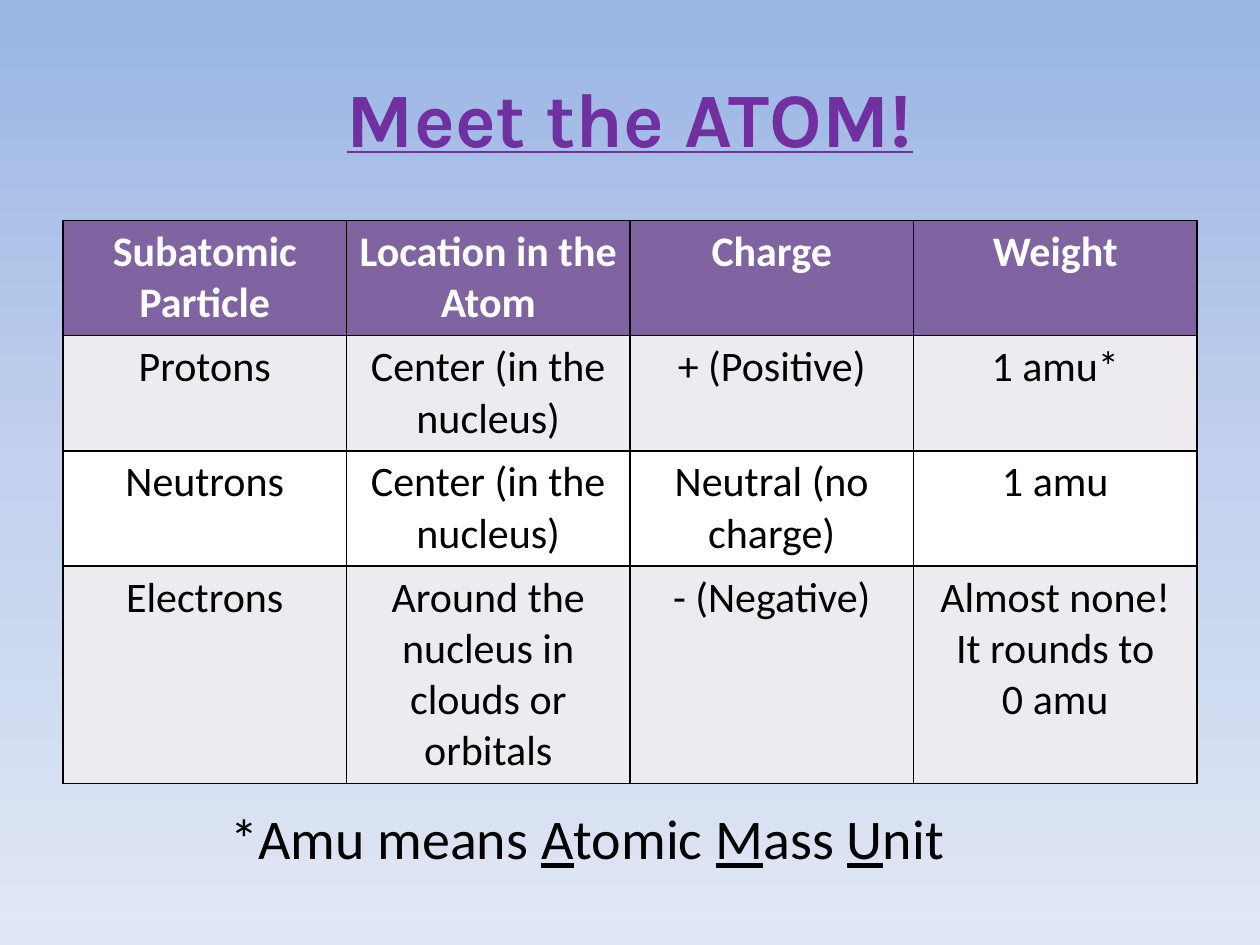
from copy import deepcopy
from dataclasses import dataclass

from lxml.etree import SubElement
from pptx import Presentation
from pptx.dml.color import RGBColor
from pptx.enum.text import MSO_ANCHOR, MSO_AUTO_SIZE, PP_ALIGN
from pptx.oxml.ns import qn
from pptx.util import Inches, Pt


@dataclass(frozen=True)
class Theme:
    body_font: str = "Calibri"
    title_font: str = "Karla"
    title_size: int = 44
    table_size: int = 24
    note_size: int = 32
    border_width: float = 1
    title: str = "7030A0"
    text: str = "000000"
    header_text: str = "FFFFFF"
    header_fill: str = "8064A2"
    band_fills: tuple = ("EDEAF0", "FFFFFF")
    background: tuple = ((0, "9AB5E4"), (0.5, "C2D1ED"), (1, "E1E8F5"))


theme = Theme()


def add_text(paragraph, text, size, color=theme.text, font=theme.body_font,
             bold=False, underline=False, align=None):
    """Add formatted text; a newline becomes a line break."""
    paragraph.alignment = align
    for index, line in enumerate(text.split("\n")):
        if index:
            paragraph.add_line_break()
        run = paragraph.add_run()
        run.text = line
        run.font.size = Pt(size)
        run.font.name = font
        run.font.bold = bold
        run.font.underline = underline
        run.font.color.rgb = RGBColor.from_string(color)


def add_borders(cell, color, width):
    """Draw all four sides of a cell, ahead of its fill in the XML."""
    properties = cell._tc.get_or_add_tcPr()
    for index, side in enumerate(("a:lnL", "a:lnR", "a:lnT", "a:lnB")):
        line = SubElement(properties, qn(side), w=str(Pt(width)))
        fill = SubElement(line, qn("a:solidFill"))
        SubElement(fill, qn("a:srgbClr"), val=color)
        properties.insert(index, line)


presentation = Presentation()
presentation.slide_width = Inches(10)
presentation.slide_height = Inches(7.5)
slide = presentation.slides.add_slide(presentation.slide_layouts[5])

# Background gradient, top to bottom
background = slide.background.fill
background.gradient()
background.gradient_angle = 270
stop_list = slide.element.find(".//" + qn("a:gsLst"))
stop_list.append(deepcopy(stop_list[-1]))
for stop, (position, color) in zip(background.gradient_stops, theme.background):
    stop.position = position
    stop.color.rgb = RGBColor.from_string(color)

# Title
title = slide.shapes.title
title.left, title.top = Inches(0.5), Inches(0.3)
title.width, title.height = Inches(9), Inches(1.25)
title.text_frame.vertical_anchor = MSO_ANCHOR.MIDDLE
add_text(title.text_frame.paragraphs[0], "Meet the ATOM!", theme.title_size,
         color=theme.title, font=theme.title_font, bold=True, underline=True,
         align=PP_ALIGN.CENTER)

# Table of subatomic particles
particles = [
    ("Subatomic Particle", "Location in the Atom", "Charge", "Weight"),
    ("Protons", "Center (in the nucleus)", "+ (Positive)", "1 amu*"),
    ("Neutrons", "Center (in the nucleus)", "Neutral (no charge)", "1 amu"),
    ("Electrons", "Around the nucleus in clouds or orbitals", "- (Negative)",
     "Almost none! It rounds to\n0 amu"),
]
row_heights = (0.91, 0.91, 0.91, 1.72)
particle_table = slide.shapes.add_table(
    len(particles), len(particles[0]), Inches(0.5), Inches(1.75),
    Inches(9), Inches(sum(row_heights))).table

for row, (values, height) in enumerate(zip(particles, row_heights)):
    particle_table.rows[row].height = Inches(height)
    is_header = row == 0
    row_fill = theme.header_fill if is_header else theme.band_fills[(row - 1) % 2]
    for column, value in enumerate(values):
        cell = particle_table.cell(row, column)
        cell.fill.solid()
        cell.fill.fore_color.rgb = RGBColor.from_string(row_fill)
        add_borders(cell, theme.text, theme.border_width)
        add_text(cell.text_frame.paragraphs[0], value, theme.table_size,
                 color=theme.header_text if is_header else theme.text,
                 bold=is_header, align=PP_ALIGN.CENTER)

# Footnote with the initials underlined
footnote = slide.shapes.add_textbox(
    Inches(1.73), Inches(6.33), Inches(5.91), Inches(0.64)).text_frame
footnote.word_wrap = False
footnote.auto_size = MSO_AUTO_SIZE.SHAPE_TO_FIT_TEXT
for part in ("*Amu means ", "A", "tomic ", "M", "ass ", "U", "nit"):
    add_text(footnote.paragraphs[0], part, theme.note_size,
             underline=part in ("A", "M", "U"))

presentation.save("out.pptx")
